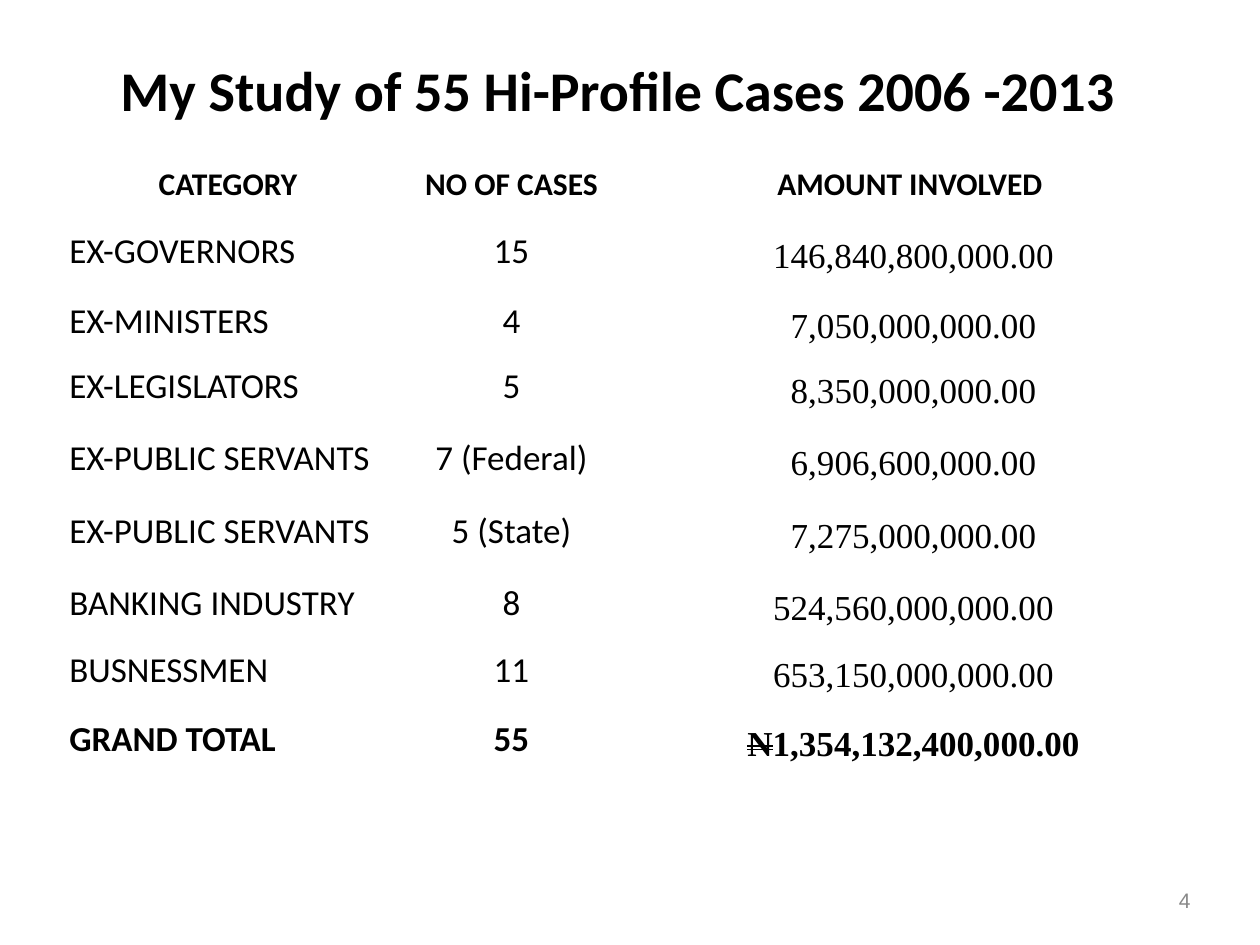
import pptx
import pptx.util
import pptx.dml.color
import pptx.enum.text

Inches = pptx.util.Inches
ALIGN = pptx.enum.text.PP_ALIGN
MIDDLE = pptx.enum.text.MSO_ANCHOR.MIDDLE
BLACK = pptx.dml.color.RGBColor(0x00, 0x00, 0x00)
GREY = pptx.dml.color.RGBColor(0x88, 0x88, 0x88)

COLUMNS = [2.62, 1.88, 4.5]
ROWS = [0.52, 0.55, 0.52, 0.57, 0.58, 0.57, 0.53, 0.55, 0.5]
CASES = [
    ("CATEGORY", "NO OF CASES", "AMOUNT INVOLVED "),
    ("EX-GOVERNORS", "15", "146,840,800,000.00"),
    ("EX-MINISTERS", "4", "7,050,000,000.00"),
    ("EX-LEGISLATORS", "5", "8,350,000,000.00"),
    ("EX-PUBLIC SERVANTS", "7 (Federal)", "6,906,600,000.00"),
    ("EX-PUBLIC SERVANTS", "5 (State)", "7,275,000,000.00"),
    ("BANKING INDUSTRY", "8", "524,560,000,000.00"),
    ("BUSNESSMEN", "11", "653,150,000,000.00"),
    ("GRAND TOTAL", "55", "1,354,132,400,000.00"),
]
MARGINS = ("margin_left", "margin_top", "margin_right", "margin_bottom")


def add_run(paragraph, text, size, name="Calibri", bold=False, color=BLACK):
    run = paragraph.add_run()
    run.text = text
    font_format = {"size": pptx.util.Pt(size), "name": name, "bold": bold}
    for attribute, value in font_format.items():
        setattr(run.font, attribute, value)
    run.font.color.rgb = color
    return run


def set_margins(holder, inches):
    for side in MARGINS:
        setattr(holder, side, Inches(inches))


deck = pptx.Presentation()
deck.slide_width, deck.slide_height = Inches(10), Inches(7.5)
slide = deck.slides.add_slide(deck.slide_layouts[6])

# Heading and page number
for text, box, align, wrap, font in [
    ("My Study of 55 Hi-Profile Cases 2006 -2013", (0.31, 0.15, 9.19, 1.11),
     ALIGN.CENTER, True, {"size": 32, "bold": True}),
    ("4", (9.3, 7, 0.2, 0.29),
     ALIGN.RIGHT, False, {"size": 12, "name": "Arial", "color": GREY}),
]:
    frame = slide.shapes.add_textbox(*map(Inches, box)).text_frame
    frame.word_wrap = wrap
    frame.vertical_anchor = MIDDLE
    set_margins(frame, 0.05)
    frame.paragraphs[0].alignment = align
    add_run(frame.paragraphs[0], text, **font)

# Cases by category
cases = slide.shapes.add_table(
    len(ROWS), len(COLUMNS), Inches(0.5), Inches(1.26),
    Inches(sum(COLUMNS)), Inches(sum(ROWS))).table
cases.first_row = cases.horz_banding = False
for column, width in zip(cases.columns, COLUMNS):
    column.width = Inches(width)
for row, height in zip(cases.rows, ROWS):
    row.height = Inches(height)

last = len(CASES) - 1
for r, record in enumerate(CASES):
    for c, text in enumerate(record):
        is_amount = c == 2 and r > 0
        cell = cases.cell(r, c)
        cell.fill.background()
        set_margins(cell, 0.06 if is_amount else 0.05)
        line = cell.text_frame.paragraphs[0]
        line.alignment = ALIGN.LEFT if c == 0 and r > 0 else ALIGN.CENTER
        font = {"size": 20 if r else 18, "bold": r in (0, last)}
        if is_amount:
            line.line_spacing = 1.15
            font["name"] = "Times New Roman"
            if r == last:
                # The naira sign is an N struck through twice
                naira = add_run(line, "N", **font)
                naira.font._element.set("strike", "dblStrike")
        add_run(line, text, **font)

deck.save("out.pptx")
